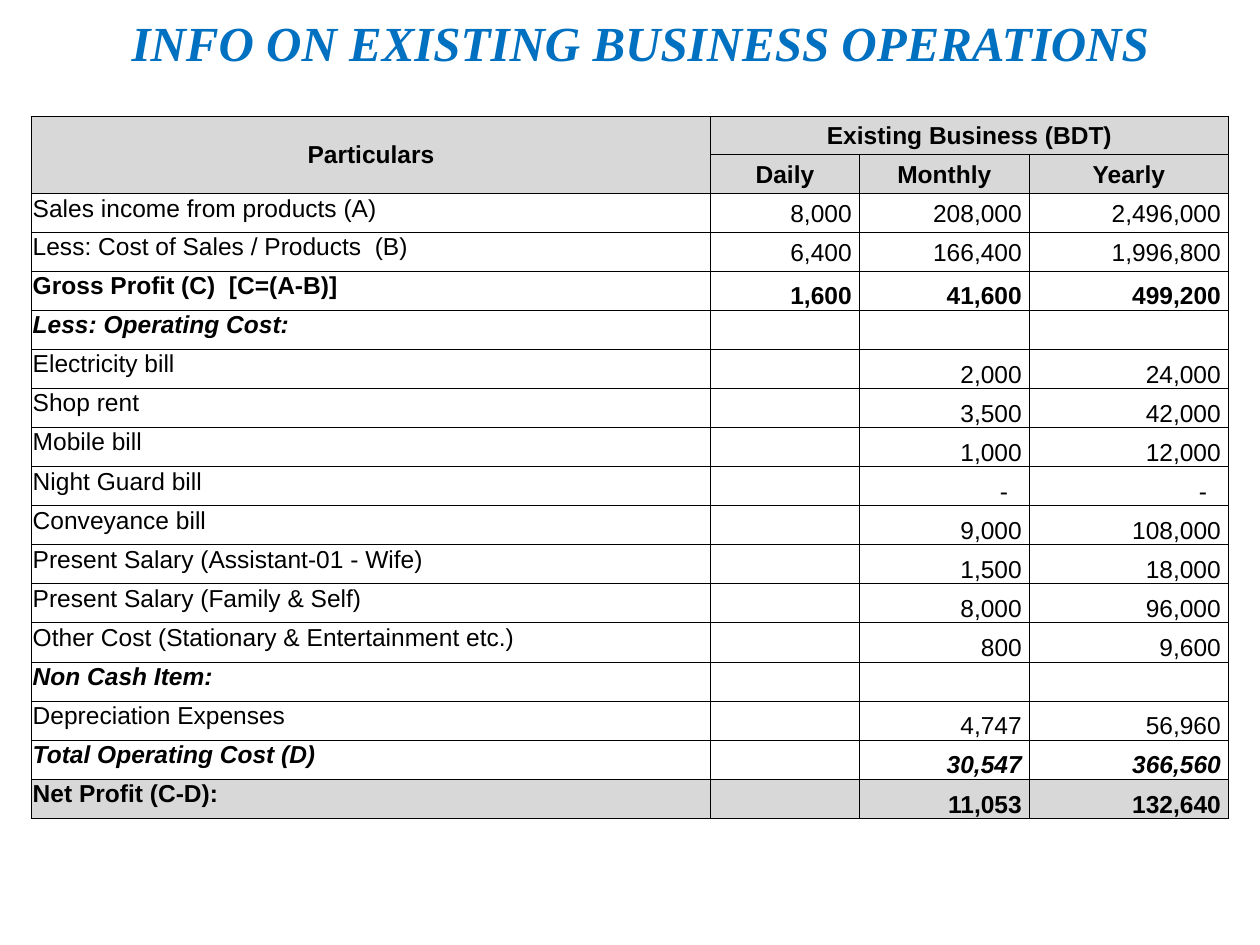
from lxml import etree
from pptx import Presentation
from pptx.dml.color import RGBColor
from pptx.enum.text import MSO_ANCHOR, PP_ALIGN
from pptx.oxml.ns import qn
from pptx.util import Inches, Pt

LEFT, CENTER, RIGHT = PP_ALIGN.LEFT, PP_ALIGN.CENTER, PP_ALIGN.RIGHT
TOP, MIDDLE, BOTTOM = MSO_ANCHOR.TOP, MSO_ANCHOR.MIDDLE, MSO_ANCHOR.BOTTOM

# Content
TITLE = "INFO ON EXISTING BUSINESS OPERATIONS"
LABEL_HEADER, GROUP_HEADER = "Particulars", "Existing Business (BDT)"
PERIODS = ["Daily", "Monthly", "Yearly"]
PLAIN, BOLD, BOLD_ITALIC = {}, {"bold": True}, {"bold": True, "italic": True}
ROWS = [  # label, daily, monthly, yearly, style
    ("Sales income from products (A)", "8,000", "208,000", "2,496,000", PLAIN),
    ("Less: Cost of Sales / Products  (B)", "6,400", "166,400", "1,996,800", PLAIN),
    ("Gross Profit (C)  [C=(A-B)]", "1,600", "41,600", "499,200", BOLD),
    ("Less: Operating Cost:", "", "", "", BOLD_ITALIC),
    ("Electricity bill", "", "2,000", "24,000", PLAIN),
    ("Shop rent", "", "3,500", "42,000", PLAIN),
    ("Mobile bill", "", "1,000", "12,000", PLAIN),
    ("Night Guard bill", "", "-", "-", PLAIN),
    ("Conveyance bill", "", "9,000", "108,000", PLAIN),
    ("Present Salary (Assistant-01 - Wife)", "", "1,500", "18,000", PLAIN),
    ("Present Salary (Family & Self)", "", "8,000", "96,000", PLAIN),
    ("Other Cost (Stationary & Entertainment etc.)", "", "800", "9,600", PLAIN),
    ("Non Cash Item:", "", "", "", BOLD_ITALIC),
    ("Depreciation Expenses", "", "4,747", "56,960", PLAIN),
    ("Total Operating Cost (D)", "", "30,547", "366,560", BOLD_ITALIC),
    ("Net Profit (C-D):", "", "11,053", "132,640", BOLD),
]

# Layout
COLUMN_WIDTHS = [5.39, 1.18, 1.35, 1.58]
HEADER_ROWS = 2
MIDDLE_ROWS = 2  # first body rows, with vertically centred numbers
TABLE_LEFT, TABLE_TOP, TABLE_HEIGHT = 0.25, 0.92, 5.55
CELL_MARGIN, NUMBER_MARGIN, DASH_MARGIN = 0.01, 0.06, 0.17
GREY, WHITE, BLACK, BLUE = "D8D8D8", "FFFFFF", "000000", "0070C0"


def color(value):
    return RGBColor.from_string(value)


def write(frame, text, size=14, name="Arial", fill=BLACK, align=LEFT,
          bold=False, italic=False):
    paragraph = frame.paragraphs[0]
    paragraph.alignment = align
    run = paragraph.add_run()
    run.text = text
    font = run.font
    font.size, font.name = Pt(size), name
    font.bold, font.italic = bold, italic
    font.color.rgb = color(fill)


def add_borders(cell, width=0.5):
    properties = cell._tc.get_or_add_tcPr()
    for side in ("a:lnL", "a:lnR", "a:lnT", "a:lnB"):
        line = etree.SubElement(properties, qn(side), w=str(Pt(width)))
        solid = etree.SubElement(line, qn("a:solidFill"))
        etree.SubElement(solid, qn("a:srgbClr"), val=BLACK)


def fill_cell(cell, text, background=WHITE, anchor=TOP, right=CELL_MARGIN, **style):
    cell.margin_left = cell.margin_top = Inches(CELL_MARGIN)
    cell.margin_right, cell.margin_bottom = Inches(right), 0
    cell.vertical_anchor = anchor
    add_borders(cell)
    cell.fill.solid()
    cell.fill.fore_color.rgb = color(background)
    write(cell.text_frame, text, **style)


presentation = Presentation()
presentation.slide_width, presentation.slide_height = Inches(10), Inches(7.5)
slide = presentation.slides.add_slide(presentation.slide_layouts[6])

# Title
title = slide.shapes.add_textbox(Inches(0.58), 0, Inches(9), Inches(0.67))
title.text_frame.word_wrap = True
title.text_frame.vertical_anchor = MIDDLE
write(title.text_frame, TITLE, size=28, name="Times New Roman", fill=BLUE,
      align=CENTER, **BOLD_ITALIC)

# Table grid
row_count = HEADER_ROWS + len(ROWS)
table = slide.shapes.add_table(
    row_count, len(COLUMN_WIDTHS), Inches(TABLE_LEFT), Inches(TABLE_TOP),
    Inches(sum(COLUMN_WIDTHS)), Inches(TABLE_HEIGHT)).table
table.first_row = table.horz_banding = False
for column, width in zip(table.columns, COLUMN_WIDTHS):
    column.width = Inches(width)
for row in table.rows:
    row.height = Inches(TABLE_HEIGHT / row_count)

# Header
table.cell(0, 0).merge(table.cell(1, 0))
table.cell(0, 1).merge(table.cell(0, 3))
headers = [[LABEL_HEADER, GROUP_HEADER, "", ""], ["", *PERIODS]]
for row_index, texts in enumerate(headers):
    for column_index, text in enumerate(texts):
        fill_cell(table.cell(row_index, column_index), text, background=GREY,
                  anchor=MIDDLE, align=CENTER, bold=True)

# Body
for index, (label, *numbers, style) in enumerate(ROWS):
    row_index = HEADER_ROWS + index
    background = GREY if index == len(ROWS) - 1 else WHITE
    anchor = MIDDLE if index < MIDDLE_ROWS else BOTTOM
    fill_cell(table.cell(row_index, 0), label, background, **style)
    for column_index, number in enumerate(numbers, start=1):
        right = DASH_MARGIN if number == "-" else NUMBER_MARGIN
        fill_cell(table.cell(row_index, column_index), number, background,
                  anchor, right, align=RIGHT, **style)

presentation.save("out.pptx")
